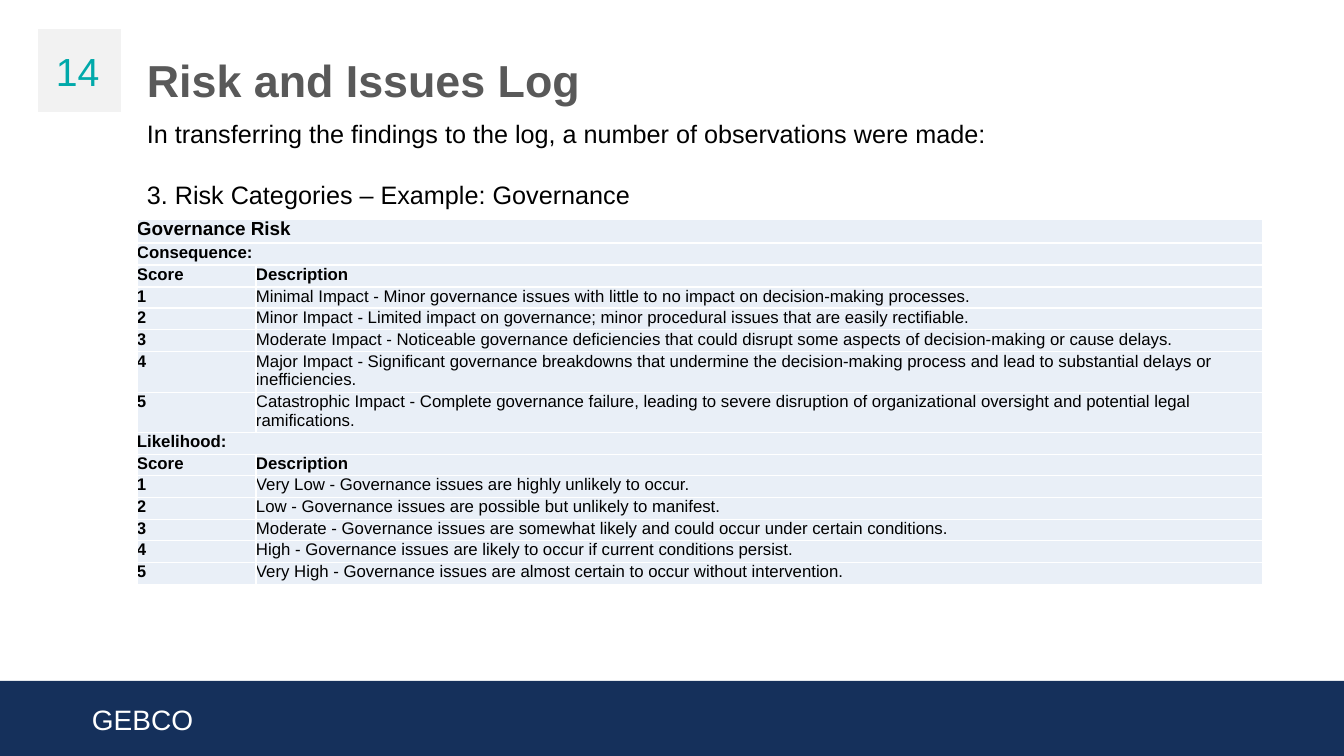
import dataclasses

import pptx
import pptx.dml.color
import pptx.enum.shapes
import pptx.enum.text
import pptx.oxml
import pptx.oxml.ns
import pptx.util


@dataclasses.dataclass(frozen=True)
class Theme:
    """Colours, font and type sizes of the slide."""
    font: str = "Arial"
    navy: str = "15305B"
    white: str = "FFFFFF"
    black: str = "000000"
    heading: str = "595959"
    teal: str = "01A9AA"
    badge: str = "F2F2F2"
    cell: str = "E9EFF7"
    title_size: float = 32
    number_size: float = 28
    footer_size: float = 20
    body_size: float = 18
    caption_size: float = 13.5
    table_size: float = 12
    border_width: float = 1


class SlideBuilder:
    """Draws styled elements on the current slide, measured in px."""

    def __init__(self, slide, theme):
        self.slide = slide
        self.theme = theme

    @staticmethod
    def px(length):
        """Turn px into EMU."""
        return pptx.util.Emu(round(length * 12192000 / 1344))

    def box(self, *lengths):
        """Turn a row of px lengths into EMU."""
        return [self.px(length) for length in lengths]

    def panel(self, left, top, width, height, colour):
        """Draw a plain filled rectangle."""
        panel = self.slide.shapes.add_shape(
            pptx.enum.shapes.MSO_SHAPE.RECTANGLE, *self.box(left, top, width, height))
        panel.shadow.inherit = False
        panel.fill.solid()
        panel.fill.fore_color.rgb = pptx.dml.color.RGBColor.from_string(colour)
        panel.line.fill.background()

    def styled_run(self, paragraph, words, size, colour, bold=False):
        """Add one styled run to a paragraph."""
        run = paragraph.add_run()
        run.text = words
        run.font.name = self.theme.font
        run.font.size = pptx.util.Pt(size)
        run.font.bold = bold
        run.font.color.rgb = pptx.dml.color.RGBColor.from_string(colour)

    def text(self, left, top, width, height, lines, size, colour,
             bold=False, gap=0, align=None):
        """Place a wrapped text box with one paragraph per line."""
        frame = self.slide.shapes.add_textbox(*self.box(left, top, width, height)).text_frame
        frame.word_wrap = True
        for index, line in enumerate(lines):
            paragraph = frame.add_paragraph() if index else frame.paragraphs[0]
            if index:
                paragraph.space_before = pptx.util.Pt(gap)
            paragraph.alignment = align
            self.styled_run(paragraph, line, size, colour, bold)

    def border(self, cell):
        """Give a cell a thin white line on each side."""
        properties = cell._tc.get_or_add_tcPr()
        width = pptx.util.Pt(self.theme.border_width)
        for side in ("lnL", "lnR", "lnT", "lnB"):
            properties.append(pptx.oxml.parse_xml(
                f'<a:{side} {pptx.oxml.ns.nsdecls("a")} w="{width}"><a:solidFill>'
                f'<a:srgbClr val="{self.theme.white}"/></a:solidFill></a:{side}>'))

    def table(self, left, top, widths, heights, rows):
        """Draw the table, spanning each row that has a single entry."""
        table = self.slide.shapes.add_table(
            len(rows), len(widths),
            *self.box(left, top, sum(widths), sum(heights))).table
        table.first_row = table.horz_banding = False
        for column, width in zip(table.columns, widths):
            column.width = self.px(width)
        for index, (entries, height) in enumerate(zip(rows, heights)):
            table.rows[index].height = self.px(height)
            size = self.theme.table_size if index else self.theme.caption_size
            for cell in table.rows[index].cells:
                cell.margin_left = cell.margin_right = 0
                cell.margin_top = cell.margin_bottom = 0
                self.border(cell)
                cell.fill.solid()
                cell.fill.fore_color.rgb = pptx.dml.color.RGBColor.from_string(self.theme.cell)
            if len(entries) == 1:
                table.cell(index, 0).merge(table.cell(index, len(widths) - 1))
            for column, entry in enumerate(entries):
                bold = column == 0 or entry == "Description"
                self.styled_run(table.cell(index, column).text_frame.paragraphs[0],
                                entry, size, self.theme.black, bold)


CONSEQUENCES = [
    "Minimal Impact - Minor governance issues with little to no impact on decision-making processes.",
    "Minor Impact - Limited impact on governance; minor procedural issues that are easily rectifiable.",
    "Moderate Impact - Noticeable governance deficiencies that could disrupt some aspects of "
    "decision-making or cause delays.",
    "Major Impact - Significant governance breakdowns that undermine the decision-making process "
    "and lead to substantial delays or inefficiencies.",
    "Catastrophic Impact - Complete governance failure, leading to severe disruption of "
    "organizational oversight and potential legal ramifications.",
]
LIKELIHOODS = [
    "Very Low - Governance issues are highly unlikely to occur.",
    "Low - Governance issues are possible but unlikely to manifest.",
    "Moderate - Governance issues are somewhat likely and could occur under certain conditions.",
    "High - Governance issues are likely to occur if current conditions persist.",
    "Very High - Governance issues are almost certain to occur without intervention.",
]


def scale_rows(heading, descriptions):
    """List the rows of one five-point scale."""
    scores = [(str(score), words) for score, words in enumerate(descriptions, 1)]
    return [(heading,), ("Score", "Description"), *scores]


def row_height(index, entries):
    """Give the px height of a table row."""
    if index == 0:
        return 24
    if len(entries[-1]) > 125:
        return 40
    return 21 if index % 3 == 0 else 22


def main():
    """Build the slide and save it."""
    theme = Theme()
    deck = pptx.Presentation()
    deck.slide_width, deck.slide_height = SlideBuilder.px(1344), SlideBuilder.px(756)
    page = SlideBuilder(deck.slides.add_slide(deck.slide_layouts[6]), theme)

    page.panel(0, 681, 1344, 75, theme.navy)
    page.text(82, 698, 209, 36, ["GEBCO"], theme.footer_size, theme.white,
              align=pptx.enum.text.PP_ALIGN.JUSTIFY)
    page.panel(38, 29, 83, 83, theme.badge)
    page.text(137, 48, 958, 64, ["Risk and Issues Log"],
              theme.title_size, theme.heading, bold=True)
    page.text(46, 42, 68, 57, ["14"], theme.number_size, theme.teal)
    page.text(137, 113, 1018, 224, [
        "In transferring the findings to the log, a number of observations were made:",
        "3. Risk Categories – Example: Governance",
    ], theme.body_size, theme.black, gap=22)

    rows = [("Governance Risk",),
            *scale_rows("Consequence:", CONSEQUENCES),
            *scale_rows("Likelihood:", LIKELIHOODS)]
    heights = [row_height(index, entries) for index, entries in enumerate(rows)]
    page.table(137, 219, [119, 1007], heights, rows)

    deck.save("out.pptx")


if __name__ == "__main__":
    main()
